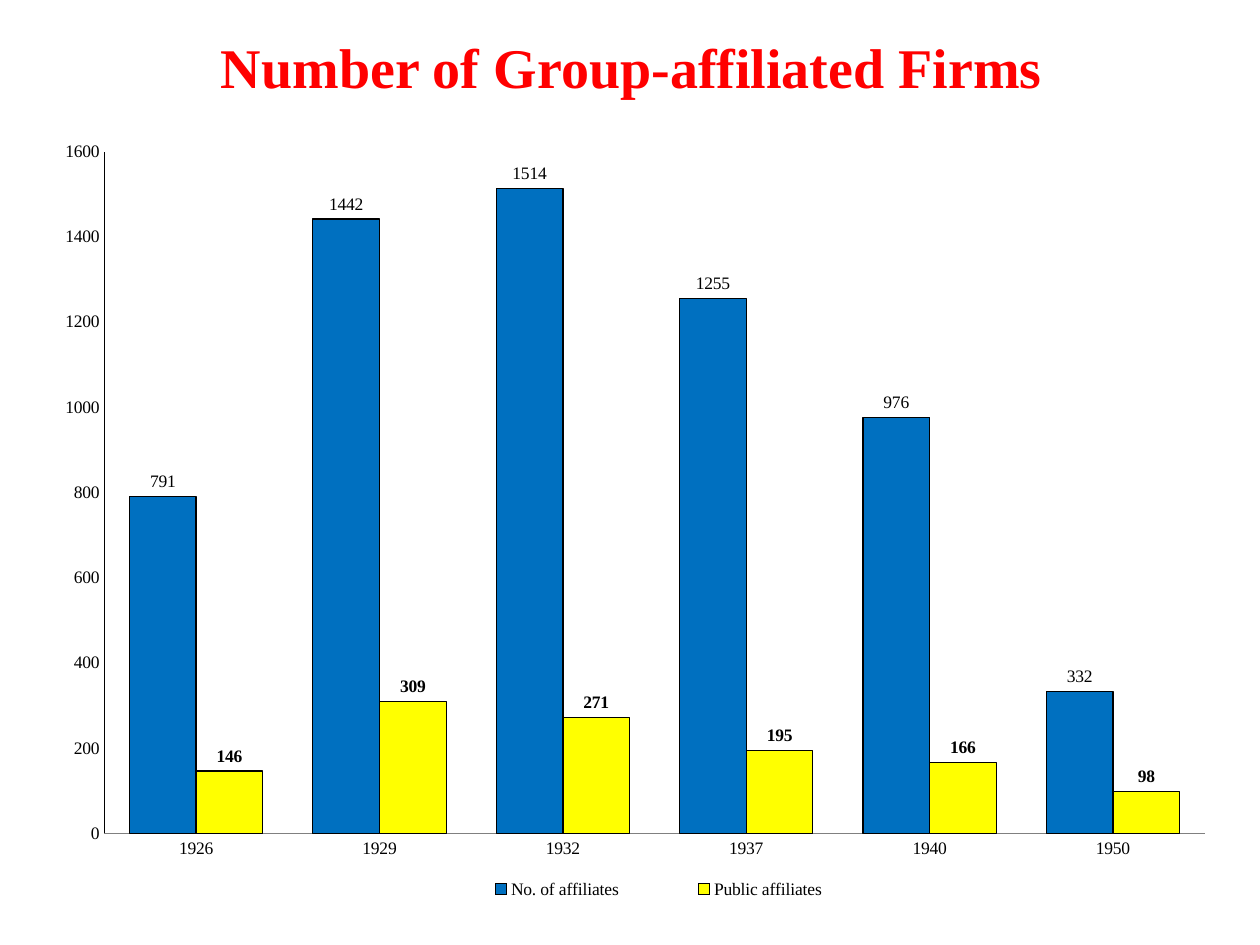
from pptx import Presentation
from pptx.chart.data import CategoryChartData
from pptx.dml.color import RGBColor
from pptx.enum.chart import XL_CHART_TYPE, XL_LABEL_POSITION, XL_LEGEND_POSITION, XL_TICK_MARK
from pptx.enum.text import MSO_ANCHOR, PP_ALIGN
from pptx.oxml import parse_xml
from pptx.oxml.ns import nsdecls
from pptx.util import Inches, Pt

COLUMNS = XL_CHART_TYPE.COLUMN_CLUSTERED
OUTSIDE = XL_LABEL_POSITION.OUTSIDE_END
BOTTOM = XL_LEGEND_POSITION.BOTTOM
NO_TICK = XL_TICK_MARK.NONE
MIDDLE = MSO_ANCHOR.MIDDLE
CENTER = PP_ALIGN.CENTER

COLORS = {"title": "FF0000", "text": "000000", "axis": "808080",
          "all": "0070C0", "public": "FFFF00"}
YEARS = ["1926", "1929", "1932", "1937", "1940", "1950"]
# name, values, colour key, bold labels
SERIES = [
    ("No. of affiliates", [791, 1442, 1514, 1255, 976, 332], "all", False),
    ("Public affiliates", [146, 309, 271, 195, 166, 98], "public", True),
]


class Deck:
    """Style and current slide; positions are shares of the slide's size."""
    font = "Times New Roman"

    def __init__(self, width, height):
        self.prs = Presentation()
        self.prs.slide_width, self.prs.slide_height = Inches(width), Inches(height)
        self.s = self.prs.slides.add_slide(self.prs.slide_layouts[6])

    def box(self, x, y, w, h):
        sw, sh = self.prs.slide_width, self.prs.slide_height
        return int(x * sw), int(y * sh), int(w * sw), int(h * sh)

    def style(self, font, size, color, bold=False):
        font.name, font.size, font.bold = self.font, Pt(size), bold
        font.color.rgb = RGBColor.from_string(COLORS[color])

    def title(self, text, *area):
        tf = self.s.shapes.add_textbox(*self.box(*area)).text_frame
        tf.word_wrap, tf.vertical_anchor = True, MIDDLE
        p = tf.paragraphs[0]
        p.text, p.alignment = text, CENTER
        self.style(p.font, 32, "title", bold=True)

    def line(self, fmt, color):
        fmt.line.width = Pt(0.75)
        fmt.line.color.rgb = RGBColor.from_string(COLORS[color])

    def place(self, parent, x, y, w, h, target=""):
        """Set a manual layout, in shares of the chart's size."""
        for old in parent.findall(f"{{{parent.nsmap['c']}}}layout"):
            parent.remove(old)
        inner = f'<c:layoutTarget val="{target}"/>' if target else ""
        layout = parse_xml(
            f'<c:layout {nsdecls("c")}><c:manualLayout>{inner}'
            '<c:xMode val="edge"/><c:yMode val="edge"/>'
            f'<c:x val="{x}"/><c:y val="{y}"/><c:w val="{w}"/><c:h val="{h}"/>'
            '</c:manualLayout></c:layout>')
        parent.insert(1 if parent.tag.endswith("legend") else 0, layout)

    def columns(self, categories, series, *area):
        data = CategoryChartData()
        data.categories = categories
        for name, values, _, _ in series:
            data.add_series(name, values)
        chart = self.s.shapes.add_chart(COLUMNS, *self.box(*area), data).chart
        chart.has_title = False
        self.style(chart.font, 10, "text")

        # Columns and their labels
        plot = chart.plots[0]
        plot.gap_width, plot.overlap, plot.vary_by_categories = 75, 0, False
        for ser, (_, _, color, bold) in zip(plot.series, series):
            ser.format.fill.solid()
            ser.format.fill.fore_color.rgb = RGBColor.from_string(COLORS[color])
            self.line(ser.format, "text")
            labels = ser.data_labels
            labels.show_value, labels.position = True, OUTSIDE
            self.style(labels.font, 10, "text", bold)

        # Axes
        for axis, color in ((chart.category_axis, "axis"), (chart.value_axis, "text")):
            axis.major_tick_mark = axis.minor_tick_mark = NO_TICK
            axis.has_major_gridlines = False
            self.line(axis.format, color)
        value_axis = chart.value_axis
        value_axis.minimum_scale, value_axis.maximum_scale = 0, 1600
        value_axis.major_unit = 200

        # Legend and plot area
        chart.has_legend = True
        legend = chart.legend
        legend.position, legend.include_in_layout = BOTTOM, False
        self.style(legend.font, 10, "text")
        legend_xml = chart.element.xpath("c:chart/c:legend")[0]
        plot_xml = chart.element.xpath("c:chart/c:plotArea")[0]
        self.place(legend_xml, 0.32, 0.95, 0.4, 0.04)
        self.place(plot_xml, 0.053, 0.033, 0.927, 0.866, "inner")


def main():
    deck = Deck(10, 7.5)
    deck.title("Number of Group-affiliated Firms", 0.003, 0.017, 0.997, 0.105)
    deck.columns(YEARS, SERIES, 0.033, 0.133, 0.942, 0.833)
    deck.prs.save("out.pptx")


if __name__ == "__main__":
    main()
